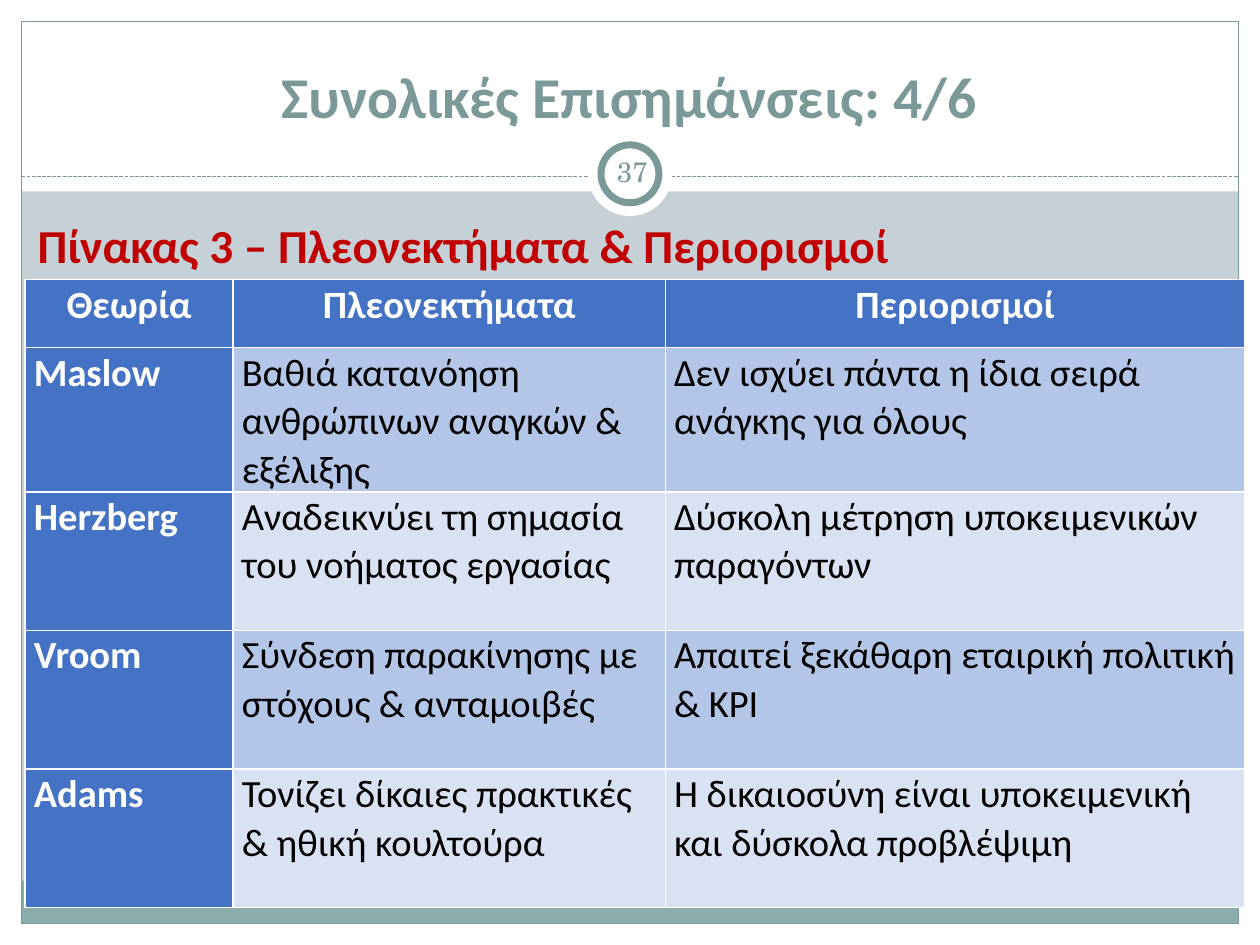
from lxml.etree import SubElement
from pptx import Presentation
from pptx.dml.color import RGBColor
from pptx.enum.dml import MSO_LINE
from pptx.enum.shapes import MSO_CONNECTOR, MSO_SHAPE
from pptx.enum.text import MSO_ANCHOR, PP_ALIGN
from pptx.oxml import parse_xml
from pptx.oxml.ns import nsdecls, qn
from pptx.util import Inches, Pt

# Content
TITLE = "Συνολικές Επισημάνσεις: 4/6"
CAPTION = "Πίνακας 3 – Πλεονεκτήματα & Περιορισμοί"
NUMBER = "37"
ROWS = [
    ("Θεωρία", "Πλεονεκτήματα", "Περιορισμοί"),
    ("Maslow", "Βαθιά κατανόηση ανθρώπινων αναγκών & εξέλιξης",
     "Δεν ισχύει πάντα η ίδια σειρά ανάγκης για όλους"),
    ("Herzberg", "Αναδεικνύει τη σημασία του νοήματος εργασίας",
     "Δύσκολη μέτρηση υποκειμενικών παραγόντων"),
    ("Vroom", "Σύνδεση παρακίνησης με στόχους & ανταμοιβές",
     "Απαιτεί ξεκάθαρη εταιρική πολιτική & KPI"),
    ("Adams", "Τονίζει δίκαιες πρακτικές & ηθική κουλτούρα",
     "Η δικαιοσύνη είναι υποκειμενική και δύσκολα προβλέψιμη"),
]

# Sizes in inches
WIDTH, HEIGHT, EDGE = 10, 7.5, 0.17
BAND, RULE, FOOT = 1.52, 1.4, 0.34
COLS = (1.65, 3.43, 4.6)
HEAD, BODY = 0.54, 1.1

# Colours
WHITE = RGBColor(0xFF, 0xFF, 0xFF)
BLACK = RGBColor(0, 0, 0)
BACK = RGBColor(0xC5, 0xD1, 0xD7)
SAGE = RGBColor(0x7C, 0x99, 0x9A)
TEAL = RGBColor(0x8C, 0xAD, 0xAE)
RED = RGBColor(0xC0, 0, 0)
BLUE = RGBColor(0x44, 0x72, 0xC4)
STRIPES = (RGBColor(0xD9, 0xE2, 0xF3), RGBColor(0xB4, 0xC6, 0xE7))


def write(frame, text, size, color, font="Calibri", bold=False,
          align=PP_ALIGN.LEFT, anchor=MSO_ANCHOR.TOP, space=None):
    frame.word_wrap = True
    frame.vertical_anchor = anchor
    para = frame.paragraphs[0]
    para.alignment = align
    para.line_spacing = space
    run = para.add_run()
    run.text = text
    run.font.name = font
    run.font.size = Pt(size)
    run.font.bold = bold
    run.font.color.rgb = color


def place(shape, *box):
    shape.left, shape.top, shape.width, shape.height = map(Inches, box)


def draw(slide, kind, box, fill=None, line=None, weight=0.75):
    shape = slide.shapes.add_shape(kind, *map(Inches, box))
    shape.shadow.inherit = False
    if fill is None:
        shape.fill.background()
    else:
        shape.fill.solid()
        shape.fill.fore_color.rgb = fill
    if line is None:
        shape.line.fill.background()
    else:
        shape.line.color.rgb = line
        shape.line.width = Pt(weight)


def border(cell, sides):
    props = cell._tc.get_or_add_tcPr()
    for spot, side in enumerate(sides):
        props.insert(spot, parse_xml(
            f'<a:ln{side} {nsdecls("a")} w="12700"><a:solidFill>'
            f'<a:srgbClr val="{WHITE}"/></a:solidFill></a:ln{side}>'))


def add_frame(slide):
    rect, oval = MSO_SHAPE.RECTANGLE, MSO_SHAPE.OVAL
    inner = WIDTH - 2 * EDGE
    # White margins and header band
    for box in ((0, HEIGHT - EDGE, WIDTH, EDGE), (0, 0, WIDTH, BAND),
                (0, 0, EDGE, HEIGHT), (WIDTH - EDGE, 0, EDGE, HEIGHT)):
        draw(slide, rect, box, fill=WHITE)
    # Footer band and outline
    draw(slide, rect, (EDGE, HEIGHT - EDGE - FOOT, inner, FOOT), fill=TEAL)
    draw(slide, rect, (EDGE, EDGE, inner, HEIGHT - 2 * EDGE), line=SAGE)
    # Dashed rule
    rule = slide.shapes.add_connector(
        MSO_CONNECTOR.STRAIGHT,
        *map(Inches, (EDGE, RULE, WIDTH - EDGE, RULE)))
    rule.line.color.rgb = SAGE
    rule.line.width = Pt(0.75)
    rule.line.dash_style = MSO_LINE.SQUARE_DOT
    SubElement(rule._element.spPr, qn("a:effectLst"))
    # Number badge
    for size, line in ((0.67, None), (0.46, SAGE)):
        box = (WIDTH - size) / 2, 1.38 - size / 2, size, size
        draw(slide, oval, box, fill=WHITE, line=line, weight=4)


def add_words(slide):
    title = slide.shapes.title
    place(title, 0.33, 0.25, 9.33, 0.83)
    write(title.text_frame, TITLE, 33, SAGE, bold=True,
          align=PP_ALIGN.CENTER, anchor=MSO_ANCHOR.BOTTOM)
    slide.shapes._spTree.append(title._element)  # above the white band

    box = slide.shapes.add_textbox(*map(Inches, (0.2, 1.67, 9.61, 0.48)))
    write(box.text_frame, CAPTION, 27, RED, bold=True)

    badge = slide.shapes.add_textbox(*map(Inches, (4.77, 1.12, 0.5, 0.48)))
    frame = badge.text_frame
    frame.margin_left = frame.margin_right = Inches(0.05)
    write(frame, NUMBER, 16, SAGE, font="TeX Gyre Schola",
          align=PP_ALIGN.CENTER, anchor=MSO_ANCHOR.MIDDLE)


def add_grid(slide):
    size = sum(COLS), HEAD + BODY * (len(ROWS) - 1)
    table = slide.shapes.add_table(
        len(ROWS), len(COLS), *map(Inches, (0.2, 2.22, *size))).table
    for col, width in zip(table.columns, COLS):
        col.width = Inches(width)
    for r, texts in enumerate(ROWS):
        table.rows[r].height = Inches(BODY if r else HEAD)
        for c, text in enumerate(texts):
            cell = table.cell(r, c)
            label = r == 0 or c == 0
            cell.margin_left = cell.margin_right = Inches(0.07)
            cell.margin_top = cell.margin_bottom = 0
            cell.fill.solid()
            cell.fill.fore_color.rgb = BLUE if label else STRIPES[r % 2]
            border(cell, "LRTB" if r else ("LTB", "TB", "RTB")[c])
            write(cell.text_frame, text, 22, WHITE if label else BLACK,
                  bold=label, space=1.04,
                  align=PP_ALIGN.LEFT if r else PP_ALIGN.CENTER)


def main():
    deck = Presentation()
    deck.slide_width, deck.slide_height = Inches(WIDTH), Inches(HEIGHT)
    slide = deck.slides.add_slide(deck.slide_layouts[5])
    slide.background.fill.solid()
    slide.background.fill.fore_color.rgb = BACK
    add_frame(slide)
    add_words(slide)
    add_grid(slide)
    deck.save("out.pptx")


if __name__ == "__main__":
    main()
